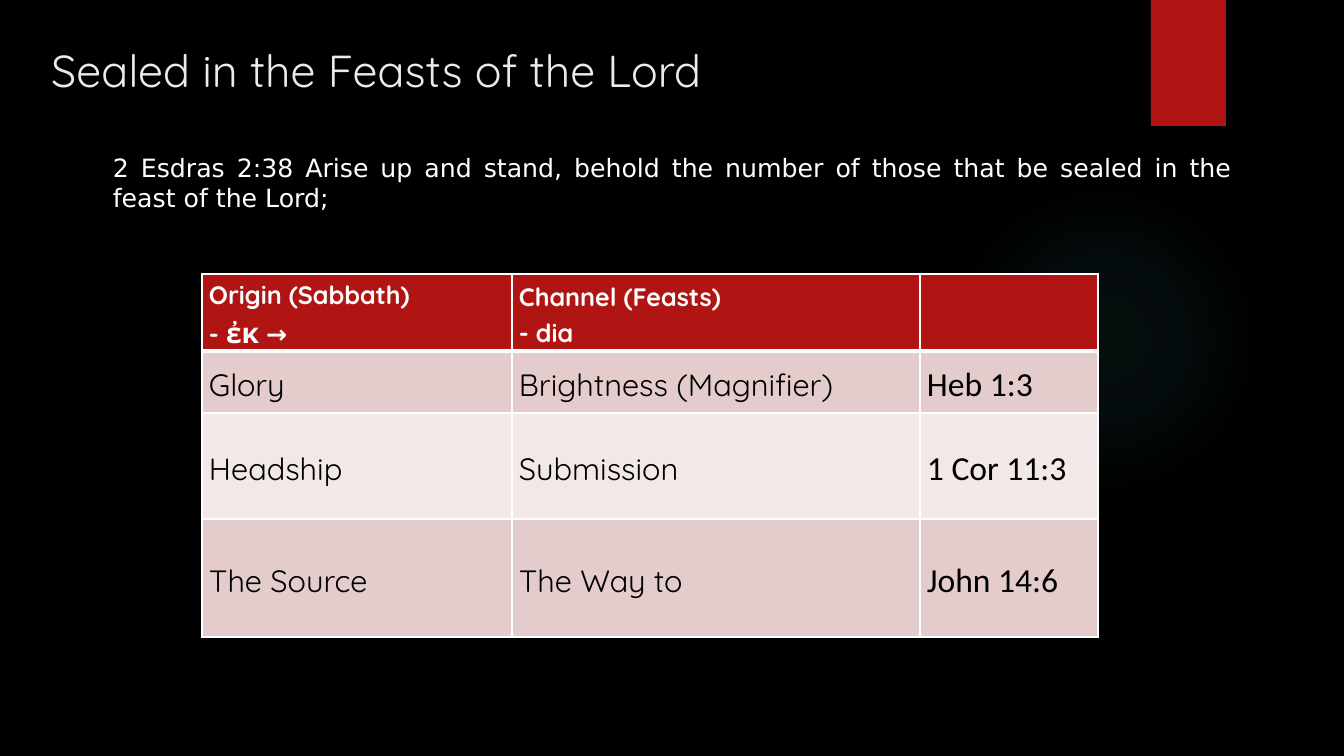
"""Build the slide on being sealed in the feasts of the Lord."""
from dataclasses import dataclass

from lxml.etree import SubElement
from pptx import Presentation
from pptx.dml.color import RGBColor
from pptx.enum.shapes import MSO_SHAPE
from pptx.enum.text import MSO_ANCHOR, MSO_AUTO_SIZE, PP_ALIGN
from pptx.oxml import parse_xml
from pptx.oxml.ns import nsdecls, qn
from pptx.util import Emu, Pt

EMU_PER_PX = 914400 / 100.8


def px(length):
    return Emu(round(length * EMU_PER_PX))


@dataclass(frozen=True)
class Theme:
    background: str = "000000"
    accent: str = "B01513"
    glow: str = "50B9C1"
    title: str = "EBEBEB"
    light: str = "FFFFFF"
    dark: str = "000000"
    bands: tuple = ("E4CCCC", "F2E8E7")
    main_font: str = "Quicksand"
    verse_font: str = "DejaVu Sans"
    reference_font: str = "Calibri"
    title_size: int = 32
    verse_size: int = 18
    header_size: int = 18
    greek_size: int = 20
    term_size: int = 22
    reference_size: int = 24


class SlideBuilder:
    def __init__(self, deck, theme):
        self.theme = theme
        self.page = deck.slides.add_slide(deck.slide_layouts[5])
        backdrop = self.page.background.fill
        backdrop.solid()
        backdrop.fore_color.rgb = RGBColor.from_string(theme.background)

    def add_span(self, para, text, size, font, color, bold=False):
        span = para.add_run()
        span.text = text
        span.font.size = Pt(size)
        span.font.name = font
        span.font.bold = bold
        span.font.color.rgb = RGBColor.from_string(color)

    def add_block(self, shape, color):
        shape.shadow.inherit = False
        shape.line.fill.background()
        shape.fill.solid()
        shape.fill.fore_color.rgb = RGBColor.from_string(color)

    def add_banner(self, left, top, width, height):
        banner = self.page.shapes.add_shape(
            MSO_SHAPE.RECTANGLE, px(left), px(top), px(width), px(height))
        self.add_block(banner, self.theme.accent)

    def add_glow(self, left, top, size, stops):
        glow = self.page.shapes.add_shape(
            MSO_SHAPE.OVAL, px(left), px(top), px(size), px(size))
        self.add_block(glow, self.theme.glow)
        stop_xml = "".join(
            f'<a:gs pos="{position * 1000}"><a:srgbClr val="{self.theme.glow}">'
            f'<a:alpha val="{alpha * 1000}"/></a:srgbClr></a:gs>'
            for position, alpha in stops)
        gradient = parse_xml(
            f'<a:gradFill {nsdecls("a")}><a:gsLst>{stop_xml}</a:gsLst>'
            '<a:path path="circle"><a:fillToRect l="50000" t="50000" '
            'r="50000" b="50000"/></a:path></a:gradFill>')
        properties = glow.fill._xPr
        properties.replace(properties.find(qn("a:solidFill")), gradient)

    def set_title(self, left, top, width, height, text):
        box = self.page.shapes.title
        box.left, box.top = px(left), px(top)
        box.width, box.height = px(width), px(height)
        frame = box.text_frame
        frame.auto_size = MSO_AUTO_SIZE.NONE
        frame.vertical_anchor = MSO_ANCHOR.TOP
        para = frame.paragraphs[0]
        para.alignment = PP_ALIGN.LEFT
        self.add_span(para, text, self.theme.title_size,
                      self.theme.main_font, self.theme.title)

    def add_verse(self, left, top, width, height, text):
        box = self.page.shapes.add_textbox(px(left), px(top), px(width), px(height))
        box.text_frame.word_wrap = True
        para = box.text_frame.paragraphs[0]
        para.alignment = PP_ALIGN.JUSTIFY
        self.add_span(para, text, self.theme.verse_size,
                      self.theme.verse_font, self.theme.light)

    def add_table(self, left, top, widths, heights, headers, rows):
        theme = self.theme
        table = self.page.shapes.add_table(
            len(heights), len(widths), px(left), px(top),
            px(sum(widths)), px(sum(heights))).table
        table.horz_banding = False
        for column, width in zip(table.columns, widths):
            column.width = px(width)
        for row, height in zip(table.rows, heights):
            row.height = px(height)

        for column, lines in enumerate(headers):
            para = self.format_cell(table.cell(0, column), theme.accent, 1, 3)
            for number, line in enumerate(lines):
                if number:
                    para.add_line_break()
                for text, size in line:
                    self.add_span(para, text, size, theme.main_font, theme.light, True)

        term = (theme.term_size, theme.main_font)
        styles = (term, term, (theme.reference_size, theme.reference_font))
        for index, texts in enumerate(rows):
            for column, (text, style) in enumerate(zip(texts, styles)):
                para = self.format_cell(table.cell(index + 1, column),
                                        theme.bands[index % 2], 1 if index else 3, 1)
                self.add_span(para, text, *style, theme.dark)

    def format_cell(self, cell, color, top_line, bottom_line):
        cell.vertical_anchor = MSO_ANCHOR.MIDDLE
        cell.margin_left = cell.margin_right = px(7)
        cell.margin_top = cell.margin_bottom = 0
        properties = cell._tc.get_or_add_tcPr()
        for side, weight in zip("LRTB", (1, 1, top_line, bottom_line)):
            line = SubElement(properties, qn(f"a:ln{side}"), w=str(Pt(weight)))
            fill = SubElement(line, qn("a:solidFill"))
            SubElement(fill, qn("a:srgbClr"), val=self.theme.light)
        cell.fill.solid()
        cell.fill.fore_color.rgb = RGBColor.from_string(color)
        para = cell.text_frame.paragraphs[0]
        para.line_spacing = 1.15
        para.space_after = Pt(10)
        return para


def main():
    theme = Theme()
    deck = Presentation()
    deck.slide_width, deck.slide_height = px(1344), px(756)
    slide = SlideBuilder(deck, theme)
    slide.add_glow(949, 184, 310, ((0, 7), (36, 6), (69, 0)))
    slide.add_banner(1151, 0, 75, 126)
    slide.set_title(41, 38, 1181, 116, "Sealed in the Feasts of the Lord")
    slide.add_verse(103, 147, 1139, 98,
                    "2 Esdras 2:38 Arise up and stand, behold the number of those "
                    "that be sealed in the feast of the Lord;")
    size = theme.header_size
    headers = (
        ([("Origin (Sabbath)", size)],
         [("- ", size), ("ἐκ", theme.greek_size), (" →", size)]),
        ([("Channel (Feasts)", size)], [("- dia", size)]),
        (),
    )
    rows = (
        ("Glory", "Brightness (Magnifier)", "Heb 1:3"),
        ("Headship", "Submission", "1 Cor 11:3"),
        ("The Source", "The Way to", "John 14:6"),
    )
    slide.add_table(202, 274, (310, 408, 178), (77, 62, 106, 118), headers, rows)
    deck.save("out.pptx")


if __name__ == "__main__":
    main()
